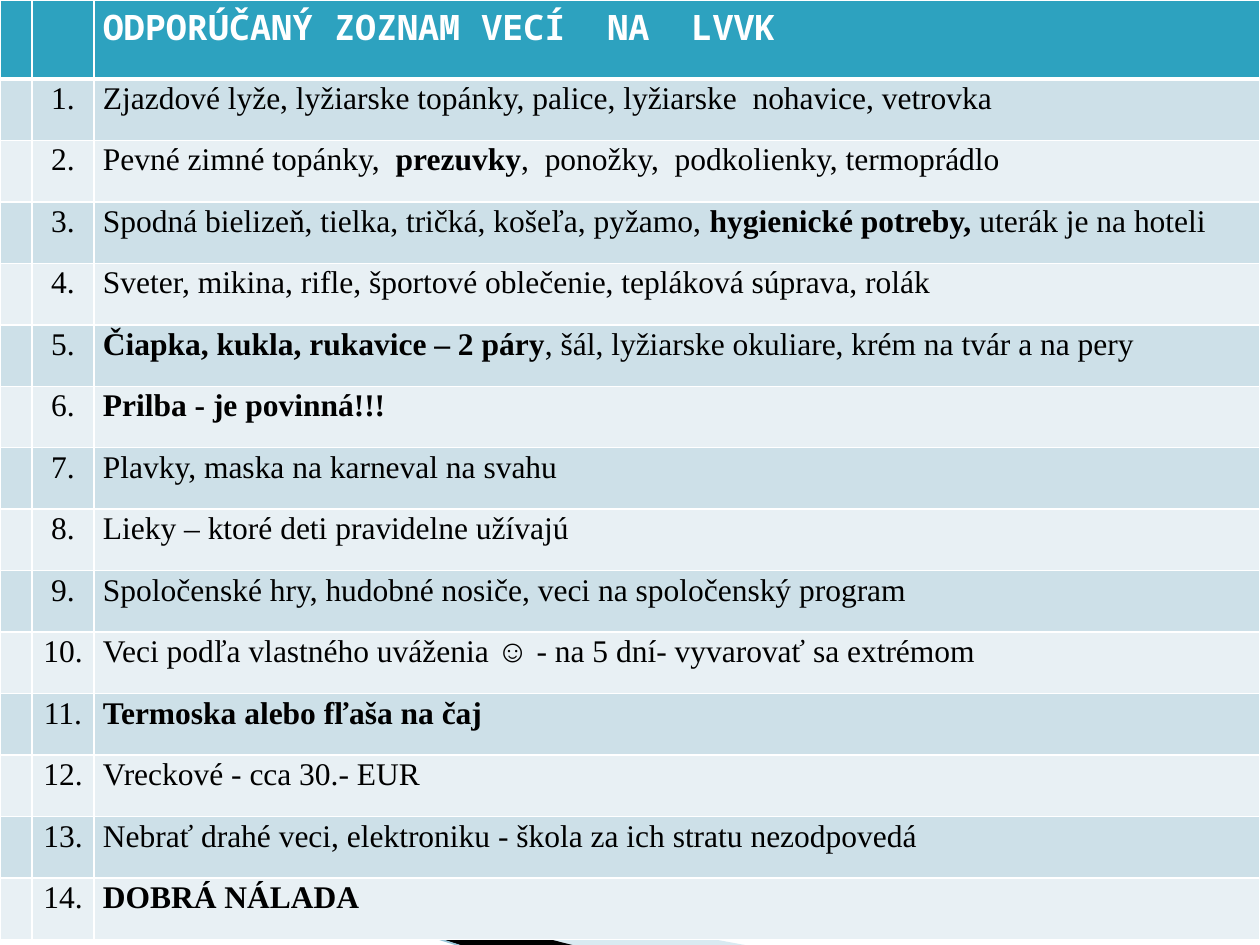
from dataclasses import dataclass

from lxml import etree
from pptx import Presentation
from pptx import util as u
from pptx.dml.color import RGBColor
from pptx.enum import shapes, text
from pptx.oxml import ns

PX = 914400 / 126  # EMU in one px
COLORS = {
    "header": "2DA2BF", "odd": "CDE0E8", "even": "E8F0F4", "white": "FFFFFF",
    "black": "000000", "wave": "A0CBDC", "edge": "97C5D8",
}
COLUMN_WIDTHS = (32, 62, 1166)
HEADER_HEIGHT = 79
TABLE_HEIGHT = 940
CELL_MARGINS = {"margin_left": 9, "margin_right": 9, "margin_top": 0, "margin_bottom": 0}
HEADING_FONT = {"name": "Noto Sans Mono", "size": u.Pt(20)}
BODY_FONT = {"name": "Times New Roman", "size": u.Pt(18)}

HEADING = "*ODPORÚČANÝ ZOZNAM VECÍ  NA  LVVK*"
# Text between asterisks is bold
ITEMS = (
    "Zjazdové lyže, lyžiarske topánky, palice, lyžiarske  nohavice, vetrovka",
    "Pevné zimné topánky,  *prezuvky*,  ponožky,  podkolienky, termoprádlo",
    "Spodná bielizeň, tielka, tričká, košeľa, pyžamo,* hygienické potreby, *uterák je na hoteli",
    "Sveter, mikina, rifle, športové oblečenie, tepláková súprava, rolák",
    "*Čiapka, kukla, rukavice – 2 páry*, šál, lyžiarske okuliare, krém na tvár a na pery",
    "*Prilba - je povinná!!!*",
    "Plavky, maska na karneval na svahu",
    "Lieky – ktoré deti pravidelne užívajú",
    "Spoločenské hry, hudobné nosiče, veci na spoločenský program",
    "Veci podľa vlastného uváženia ☺ - na 5 dní- vyvarovať sa extrémom",
    "*Termoska alebo fľaša na čaj*",
    "Vreckové - cca 30.- EUR",
    "Nebrať drahé veci, elektroniku - škola za ich stratu nezodpovedá",
    "*DOBRÁ NÁLADA*",
)


@dataclass
class Row:
    number: str
    content: str
    fill: str
    color: str
    font: dict
    bottom_border: int


@dataclass
class Wave:
    frame: tuple  # left, top, width, height; the outline reaches beyond it
    points: tuple
    color: str
    opacity: int


WAVES = (
    Wave((98, 689, 524, 199), ((69, 820), (750, 946), (575, 946), (69, 819)), "wave", 40),
    Wave((-8, 798, 524, 116), ((67, 818), (576, 946), (469, 948), (68, 819)), "black", 100),
)


def px(length: int) -> int:
    return round(length * PX)


def rgb(name: str) -> RGBColor:
    return RGBColor.from_string(COLORS[name])


def set_attributes(target, values: dict) -> None:
    for name, value in values.items():
        setattr(target, name, value)


def set_frame(shape, frame: tuple) -> None:
    """Give the shape its frame while the outline stays in place."""
    left, top, width, height = map(px, frame)
    shift = {"x": shape.left - left, "y": shape.top - top}
    outline = shape._element.find(".//" + ns.qn("a:path"))
    scale = {"x": shape.width / int(outline.get("w")), "y": shape.height / int(outline.get("h"))}
    for point in outline.iter(ns.qn("a:pt")):
        for axis in "xy":
            point.set(axis, str(round(int(point.get(axis)) * scale[axis] + shift[axis])))
    outline.set("w", str(width))
    outline.set("h", str(height))
    set_attributes(shape, {"left": left, "top": top, "width": width, "height": height})


def add_wave(slide, wave: Wave) -> None:
    builder = slide.shapes.build_freeform(*wave.points[0], scale=PX)
    builder.add_line_segments(wave.points[1:], close=True)
    shape = builder.convert_to_shape()
    set_frame(shape, wave.frame)
    shape.shadow.inherit = False
    shape.line.fill.background()
    shape.fill.solid()
    shape.fill.fore_color.rgb = rgb(wave.color)
    if wave.opacity < 100:
        color = shape._element.spPr.find(".//" + ns.qn("a:srgbClr"))
        etree.SubElement(color, ns.qn("a:alpha"), val=str(wave.opacity * 1000))


def add_edge(slide) -> None:
    edge = slide.shapes.add_connector(
        shapes.MSO_CONNECTOR.STRAIGHT, px(-1), px(798), px(467), px(948))
    edge.line.color.rgb = rgb("edge")
    edge.line.width = u.Pt(0.95)
    etree.SubElement(edge._element.spPr, ns.qn("a:effectLst"))


def set_borders(cell, bottom: int) -> None:
    properties = cell._tc.get_or_add_tcPr()
    for side, width in (("L", 1), ("R", 1), ("T", 1), ("B", bottom)):
        line = etree.SubElement(properties, ns.qn(f"a:ln{side}"), w=str(u.Pt(width)))
        fill = etree.SubElement(line, ns.qn("a:solidFill"))
        etree.SubElement(fill, ns.qn("a:srgbClr"), val=COLORS["white"])


def write_cell(cell, content: str, row: Row, alignment) -> None:
    paragraph = cell.text_frame.paragraphs[0]
    set_attributes(paragraph, {"alignment": alignment, "line_spacing": 1.07})
    for index, part in enumerate(content.split("*")):
        if part:
            run = paragraph.add_run()
            run.text = part
            set_attributes(run.font, {**row.font, "bold": index % 2 == 1})
            run.font.color.rgb = rgb(row.color)


def fill_row(cells, row: Row) -> None:
    for cell in cells:
        set_borders(cell, row.bottom_border)
        cell.fill.solid()
        cell.fill.fore_color.rgb = rgb(row.fill)
        set_attributes(cell, {name: px(value) for name, value in CELL_MARGINS.items()})
    write_cell(cells[1], row.number, row, text.PP_ALIGN.CENTER)
    write_cell(cells[2], row.content, row, text.PP_ALIGN.LEFT)


def add_packing_list(slide) -> None:
    rows = [Row("", HEADING, "header", "white", HEADING_FONT, 3)]
    for number, item in enumerate(ITEMS, 1):
        fill = "odd" if number % 2 else "even"
        rows.append(Row(f"{number}.", item, fill, "black", BODY_FONT, 1))

    table = slide.shapes.add_table(
        len(rows), len(COLUMN_WIDTHS), 0, 0, px(sum(COLUMN_WIDTHS)), px(TABLE_HEIGHT)).table
    table.horz_banding = False
    for column, width in zip(table.columns, COLUMN_WIDTHS):
        column.width = px(width)
    item_height = px(TABLE_HEIGHT - HEADER_HEIGHT) // len(ITEMS)
    for index, (table_row, row) in enumerate(zip(table.rows, rows)):
        table_row.height = item_height if index else px(HEADER_HEIGHT)
        fill_row(list(table_row.cells), row)


def main() -> None:
    presentation = Presentation()
    set_attributes(presentation, {"slide_width": px(1260), "slide_height": px(945)})
    slide = presentation.slides.add_slide(presentation.slide_layouts[6])

    # Decoration at the bottom edge
    for wave in WAVES:
        add_wave(slide, wave)
    add_edge(slide)

    # Numbered list of things to bring
    add_packing_list(slide)
    presentation.save("out.pptx")


if __name__ == "__main__":
    main()
